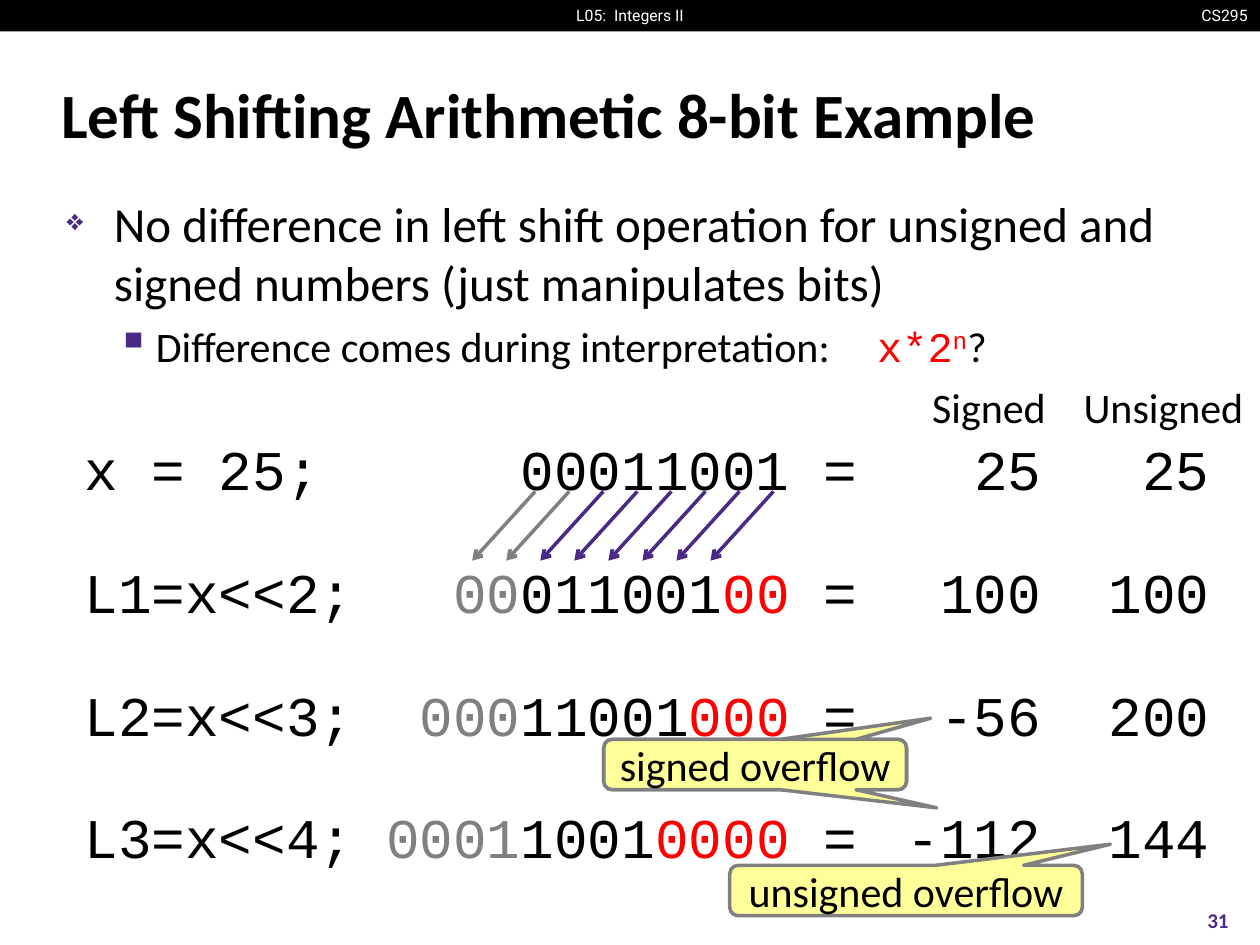
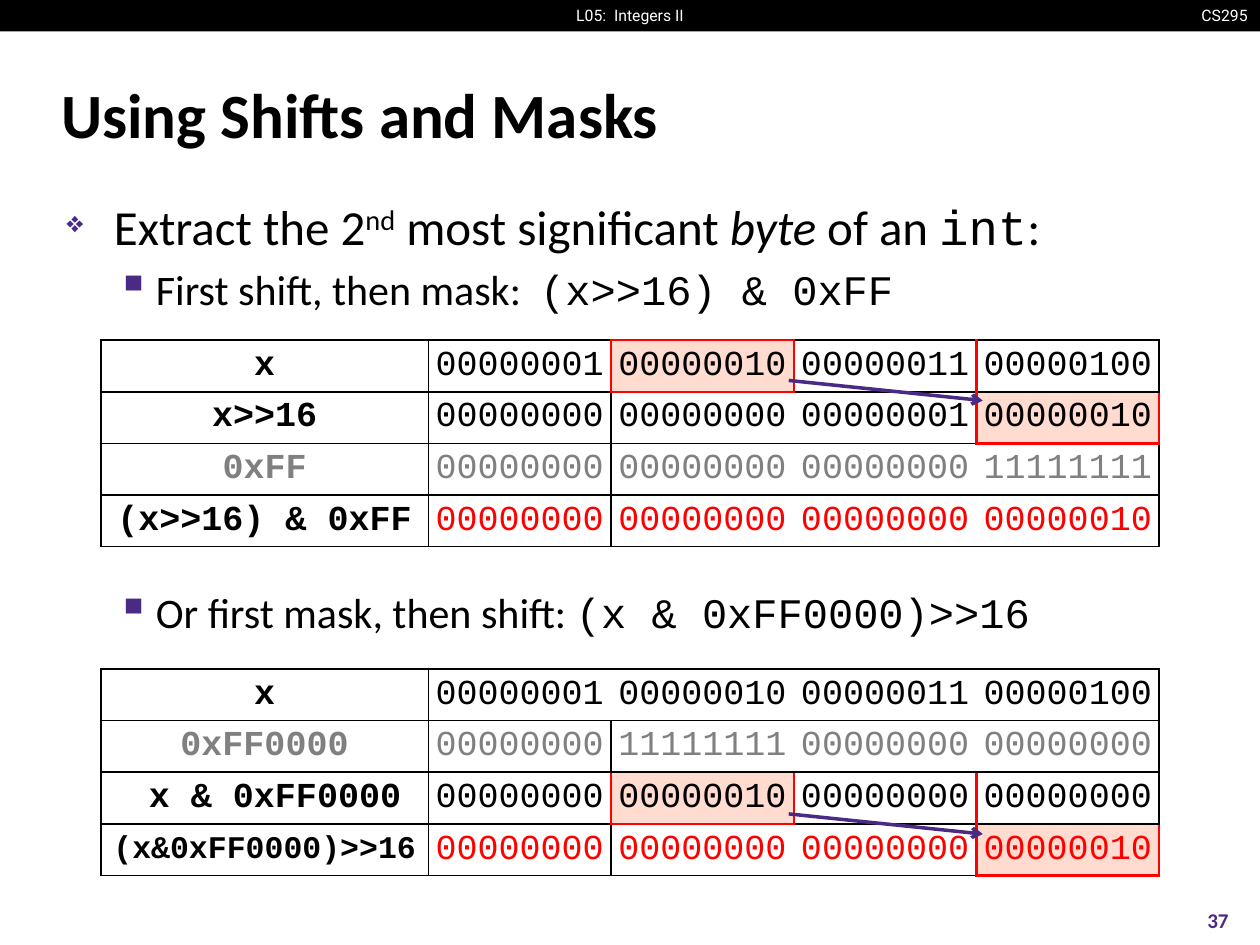
"""Build two lecture slides about shifting integers: left shift results and byte extraction."""
from lxml import etree
from pptx import Presentation
from pptx.dml.color import RGBColor as Rgb
from pptx.enum.shapes import MSO_CONNECTOR as Connector, MSO_SHAPE as Shape
from pptx.enum.text import MSO_ANCHOR as Anchor, PP_ALIGN as Align
from pptx.oxml import parse_xml
from pptx.oxml.ns import nsdecls, qn
from pptx.util import Pt

COLORS = {
    "black": "000000", "white": "FFFFFF", "purple": "4B2A85", "gray": "808080",
    "red": "FF0000", "yellow": "FFFF99", "pink": "FFDBD0",
}
BAND = {"name": "Roboto", "size": Pt(9), "color": "white"}
TITLE = {"name": "Calibri", "size": Pt(36), "bold": True, "color": "black"}
BODY = {"name": "Calibri", "size": Pt(28), "color": "black"}
SUB = {**BODY, "size": Pt(24)}
NUMBER = {"name": "Calibri", "size": Pt(12), "bold": True, "color": "purple"}
CODE = {"name": "Courier New", "size": Pt(32), "color": "black"}
BYTE = {**CODE, "size": Pt(20), "bold": False}
MONO = {"name": "Courier New"}
GRAY, RED = {"color": "gray"}, {"color": "red"}
BULLETS = [("❖", 60, 27, -27), ("▪", 110, 51, -22.5)]


def write(frame, lines, style, align=Align.LEFT, tabs=(), **layout):
    """Fill a text frame with lines of (text, style changes) spans."""
    for name, value in {"word_wrap": True, **layout}.items():
        setattr(frame, name, value)
    for index, line in enumerate(lines):
        para = frame.add_paragraph() if index else frame.paragraphs[0]
        para.alignment = align
        if tabs:
            stops = etree.SubElement(para._p.get_or_add_pPr(), qn("a:tabLst"))
            for kind, place in tabs:
                etree.SubElement(stops, qn("a:tab"), pos=str(Pt(place)), algn=kind)
        for text, changes in line:
            span = para.add_run()
            span.text = text
            for name, value in {**style, **changes}.items():
                if name == "color":
                    span.font.color.rgb = Rgb.from_string(COLORS[value])
                elif name in ("baseline", "spc"):
                    span._r.get_or_add_rPr().set(name, str(value))
                else:
                    setattr(span.font, name, value)


def add_arrow(page, start, end, color="purple"):
    """Draw a 2 pt line with an open arrowhead at its end."""
    arrow = page.shapes.add_connector(Connector.STRAIGHT, *map(Pt, start + end))
    arrow.line.color.rgb = Rgb.from_string(COLORS[color])
    arrow.line.width = Pt(2)
    outline = arrow._element.spPr.find(qn("a:ln"))
    etree.SubElement(outline, qn("a:tailEnd"), type="arrow")
    etree.SubElement(arrow._element.spPr, qn("a:effectLst"))


deck = Presentation()
deck.slide_width, deck.slide_height = Pt(720), Pt(540)

outlines = [
    ("Left Shifting Arithmetic 8-bit Example", "31", 107.3, [
        (0, [("No difference in left shift operation for unsigned and signed numbers "
              "(just manipulates bits)", BODY)]),
        (1, [("Difference comes during interpretation:", SUB), (" ", {**SUB, "spc": 2150}),
             ("x*2", {**SUB, **MONO, **RED}),
             ("n", {**SUB, **MONO, **RED, "baseline": 30000}), ("?", SUB)]),
    ]),
    ("Using Shifts and Masks", "37", 108.7, [
        (0, [("Extract the 2", BODY), ("nd", {"baseline": 30000}), (" most significant ", BODY),
             ("byte", {"italic": True}), (" of an ", BODY), ("int", MONO), (":", BODY)]),
        (1, [("First shift, then mask:  ", SUB), ("(x>>16) & 0xFF", {**SUB, **MONO})]),
        (1, [("Or first mask, then shift: ", SUB), ("(x & 0xFF0000)>>16", {**SUB, **MONO})]),
    ]),
]

pages = []
for title, number, body_top, outline in outlines:
    page = deck.slides.add_slide(deck.slide_layouts[6])
    band = page.shapes.add_shape(Shape.RECTANGLE, 0, 0, Pt(720), Pt(18))
    band.shadow.inherit = False
    band.fill.solid()
    band.fill.fore_color.rgb = Rgb.from_string(COLORS["black"])
    band.line.fill.background()
    middle = {"vertical_anchor": Anchor.MIDDLE}
    for text, style, place, align, layout in [
        ("CS295", BAND, (677.5, 0, 42.5, 18), Align.RIGHT, {"word_wrap": False}),
        ("L05:  Integers II", BAND, (321, 0, 78, 18), Align.CENTER, {"word_wrap": False}),
        (title, TITLE, (28, 34.5, 662, 60), Align.LEFT, middle),
        (number, NUMBER, (672, 511, 48, 29), Align.CENTER, middle),
    ]:
        box = page.shapes.add_textbox(*map(Pt, place))
        write(box.text_frame, [[(text, {})]], style, align, **layout)
    body = page.shapes.add_textbox(Pt(31), Pt(body_top), Pt(659), Pt(392))
    write(body.text_frame, [line for level, line in outline], BODY)
    for para, (level, line) in zip(body.text_frame.paragraphs, outline):
        mark, percent, margin, indent = BULLETS[level]
        properties = para._p.get_or_add_pPr()
        for name, value in {"marL": Pt(margin), "indent": Pt(indent), "lvl": level}.items():
            properties.set(name, str(value))
        for part in (
            '<a:spcBef {}><a:spcPct val="20000"/></a:spcBef>',
            '<a:buClr {}><a:srgbClr val="' + COLORS["purple"] + '"/></a:buClr>',
            f'<a:buSzPct {{}} val="{percent * 1000}"/>',
            f'<a:buChar {{}} char="{mark}"/>',
        ):
            properties.append(parse_xml(part.format(nsdecls("a"))))
    pages.append((page, body))

page, body = pages[0]
shifts = [
    ("x = 25;", "", "00011001", "", "25", "25"),
    ("L1=x<<2;", "00", "011001", "00", "100", "100"),
    ("L2=x<<3;", "000", "11001", "000", "-56", "200"),
    ("L3=x<<4;", "0001", "1001", "0000", "-112", "144"),
]
code_lines, value_lines = [], []
for label, lost, kept, added, signed, unsigned in shifts:
    spans = [(label + "\t", {}), (lost, GRAY), (kept, {}), (added, RED), (" =", {})]
    code_lines.append([span for span in spans if span[0]])
    value_lines.append([(f"\t{signed}\t{unsigned}", {})])
code_box = page.shapes.add_textbox(Pt(21.6), Pt(244.8), Pt(475.2), Pt(250))
write(code_box.text_frame, code_lines, CODE, tabs=[("r", 441.5)],
      margin_left=Pt(26.7), margin_right=0)
for column in range(8):
    x = 442 - 19.45 * column
    add_arrow(page, (x, 280.8), (x - 36, 320.4), "gray" if column > 5 else "purple")
value_box = page.shapes.add_textbox(Pt(504), Pt(244.8), Pt(194.4), Pt(250))
write(value_box.text_frame, value_lines, CODE, tabs=[("r", 84), ("r", 180)])
for box in (code_box, value_box):
    for para in box.text_frame.paragraphs[1:]:
        para.space_before = Pt(31.75)
heading = page.shapes.add_textbox(Pt(525.6), Pt(214.5), Pt(194.4), Pt(36))
write(heading.text_frame, [[("Signed\tUnsigned", {})]], SUB, tabs=[("l", 86.5)],
      margin_right=0)

for text, left, top, width, pointer in [
    ("signed overflow", 345, 422.5, 173, (0.58, -0.92)),
    ("unsigned overflow", 417, 494.5, 201.5, (0.58, -0.92)),
    ("signed overflow", 345, 422.5, 173, (0.6, 0.86)),
]:
    callout = page.shapes.add_shape(
        Shape.ROUNDED_RECTANGULAR_CALLOUT, Pt(left), Pt(top), Pt(width), Pt(28.8))
    callout.shadow.inherit = False
    callout.fill.solid()
    callout.fill.fore_color.rgb = Rgb.from_string(COLORS["yellow"])
    callout.line.color.rgb = Rgb.from_string(COLORS["gray"])
    callout.line.width = Pt(2)
    for index, value in enumerate((*pointer, 0.17)):
        callout.adjustments[index] = value
    write(callout.text_frame, [[(text, {})]], SUB, Align.CENTER,
          vertical_anchor=Anchor.MIDDLE, margin_left=0, margin_right=0,
          margin_top=0, margin_bottom=0)

page, body = pages[1]
body.text_frame.paragraphs[2].space_before = Pt(155.5)
ZERO, TWO, ONES = "00000000", "00000010", "11111111"
X_BYTES = ["00000001", TWO, "00000011", "00000100"]
LINES = {"k": ("black", 1), "r": ("red", 1.5)}
ROW_HEIGHT = 29.5
byte_grids = [
    (194.4, [
        ("x", X_BYTES, "black", "black", 2, "krrr"),
        ("x>>16", [ZERO, ZERO, "00000001", TWO], "black", "black", 4, "kk-r"),
        ("0xFF", [ZERO, ZERO, ZERO, ONES], "gray", "gray", None, "kk--"),
        ("(x>>16) & 0xFF", [ZERO, ZERO, ZERO, TWO], "black", "red", None, "kk--"),
    ]),
    (382.3, [
        ("x", X_BYTES, "black", "black", None, "k---"),
        ("0xFF0000", [ZERO, ONES, ZERO, ZERO], "gray", "gray", None, "kk--"),
        (" x & 0xFF0000", [ZERO, TWO, ZERO, ZERO], "black", "black", 2, "krrr"),
        ("(x&0xFF0000)>>16", [ZERO, ZERO, ZERO, TWO], "black", "red", 4, "kk-r"),
    ]),
]
for top, rows in byte_grids:
    for index, row in reversed(list(enumerate(rows))):
        label, values, label_color, value_color, marked, dividers = row
        table = page.shapes.add_table(
            1, 5, Pt(57.6), Pt(top + index * ROW_HEIGHT), Pt(604.8), Pt(ROW_HEIGHT)).table
        table.first_row = table.horz_banding = False
        table.rows[0].height = Pt(ROW_HEIGHT)
        verticals = "k" + dividers + ("r" if marked == 4 else "k")
        for column, text in enumerate([label, *values]):
            table.columns[column].width = Pt(104.4 if column else 187.2)
            cell = table.cell(0, column)
            style = {**BYTE, "color": value_color}
            if column == 0:
                size = Pt(18 if len(label) > 15 else 20)
                style = {**BYTE, "bold": True, "size": size, "color": label_color}
            write(cell.text_frame, [[(text, {})]], style, Align.CENTER)
            side = 0 if column else Pt(7.2)
            for name, value in {"margin_left": side, "margin_right": side, "margin_top": 0,
                                "margin_bottom": 0, "vertical_anchor": Anchor.MIDDLE}.items():
                setattr(cell, name, value)
            cell.fill.background()
            if column == marked:
                cell.fill.solid()
                cell.fill.fore_color.rgb = Rgb.from_string(COLORS["pink"])
            edge = "r" if column == marked else "k"
            edges = [verticals[column], verticals[column + 1], edge, edge]
            for place, (name, kind) in enumerate(zip("LRTB", edges)):
                border = etree.Element(qn("a:ln" + name))
                if kind in LINES:
                    color, width = LINES[kind]
                    border.set("w", str(Pt(width)))
                    paint = etree.SubElement(border, qn("a:solidFill"))
                    etree.SubElement(paint, qn("a:srgbClr"), val=COLORS[color])
                else:
                    etree.SubElement(border, qn("a:noFill"))
                cell._tc.get_or_add_tcPr().insert(place, border)
for y in (217.4, 465.1):
    add_arrow(page, (450.7, y), (561.6, y + 11.5))

deck.save("out.pptx")
